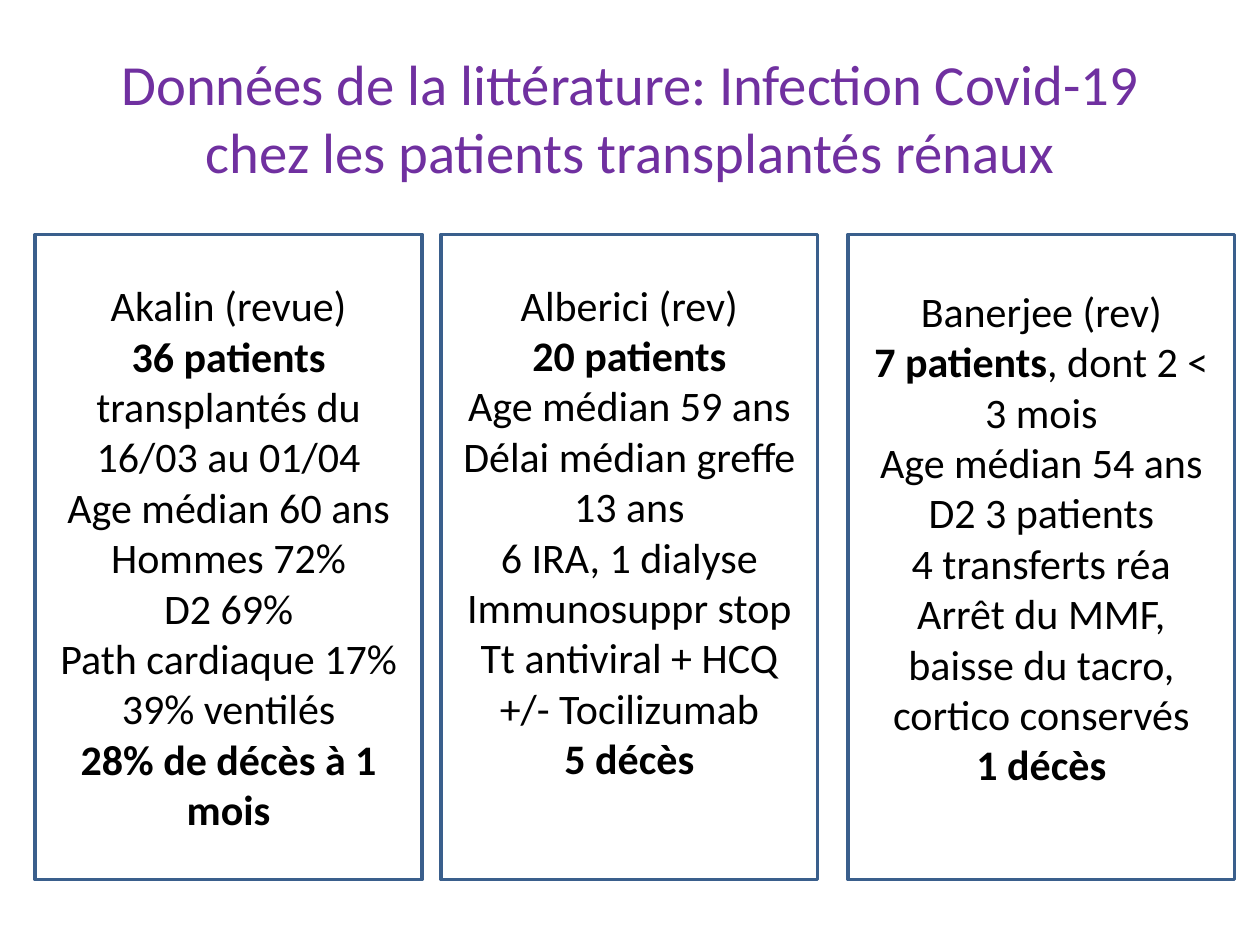
from pptx import Presentation
from pptx.dml.color import RGBColor
from pptx.enum.shapes import MSO_SHAPE
from pptx.enum.text import MSO_ANCHOR, PP_ALIGN
from pptx.util import Inches, Pt

COLORS = {"title": "7030A0", "text": "000000", "line": "3A5F8C"}

# Each study: left, width, bottom inset, lines made of (text, bold) runs
STUDIES = [
    (0.28, 3.07, 0.05, [
        [("Akalin (revue)", False)],
        [("36 patients ", True), ("transplantés du 16/03 au 01/04", False)],
        [("Age médian 60 ans Hommes 72%", False)],
        [("D2 69%", False)],
        [("Path cardiaque 17%", False)],
        [("39% ventilés", False)],
        [("28% de décès à 1 mois", True)],
    ]),
    (3.5, 2.99, 0.46, [
        [("Alberici (rev)", False)],
        [("20 patients", True)],
        [("Age médian 59 ans", False)],
        [("Délai médian greffe 13 ans", False)],
        [("6 IRA, 1 dialyse", False)],
        [("Immunosuppr stop", False)],
        [("Tt antiviral + HCQ", False)],
        [("+/- Tocilizumab", False)],
        [("5 décès", True)],
    ]),
    (6.73, 3.07, 0.36, [
        [("Banerjee (rev)", False)],
        [("7 patients", True), (", dont 2 < 3 mois", False)],
        [("Age médian 54 ans", False)],
        [("D2 3 patients", False)],
        [("4 transferts réa", False)],
        [("Arrêt du MMF, baisse du tacro, cortico conservés", False)],
        [("1 décès", True)],
    ]),
]


def color(name):
    return RGBColor.from_string(COLORS[name])


def write(para, text, size=24, bold=False, fill="text", font="Calibri"):
    para.alignment = PP_ALIGN.CENTER
    run = para.add_run()
    run.text = text
    run.font.name = font
    run.font.size = Pt(size)
    run.font.bold = bold
    run.font.color.rgb = color(fill)


class Deck:
    top, height, side = Inches(1.86), Inches(5.12), Inches(0.12)

    def __init__(self):
        self.prs = Presentation()
        self.prs.slide_width, self.prs.slide_height = Inches(10), Inches(7.5)
        self.slide = self.prs.slides.add_slide(self.prs.slide_layouts[5])

    def title(self, text):
        head = self.slide.shapes.title
        head.left, head.top = Inches(0.5), Inches(0.3)
        head.width, head.height = Inches(9), Inches(1.25)
        head.text_frame.vertical_anchor = MSO_ANCHOR.MIDDLE
        write(head.text_frame.paragraphs[0], text, size=32.4, fill="title")

    def panel(self, left, width, inset, lines):
        box = self.slide.shapes.add_shape(
            MSO_SHAPE.RECTANGLE, Inches(left), self.top, Inches(width), self.height)
        box.shadow.inherit = False
        box.fill.background()
        box.line.color.rgb = color("line")
        box.line.width = Pt(2)
        frame = box.text_frame
        frame.word_wrap = True
        frame.vertical_anchor = MSO_ANCHOR.MIDDLE
        frame.margin_left = frame.margin_right = self.side
        frame.margin_bottom = Inches(inset)
        for i, line in enumerate(lines):
            para = frame.add_paragraph() if i else frame.paragraphs[0]
            for text, bold in line:
                write(para, text, bold=bold)


def main():
    deck = Deck()
    # Title
    deck.title("Données de la littérature: Infection Covid-19 "
               "chez les patients transplantés rénaux")
    # One panel per study
    for study in STUDIES:
        deck.panel(*study)
    deck.prs.save("out.pptx")


if __name__ == "__main__":
    main()
